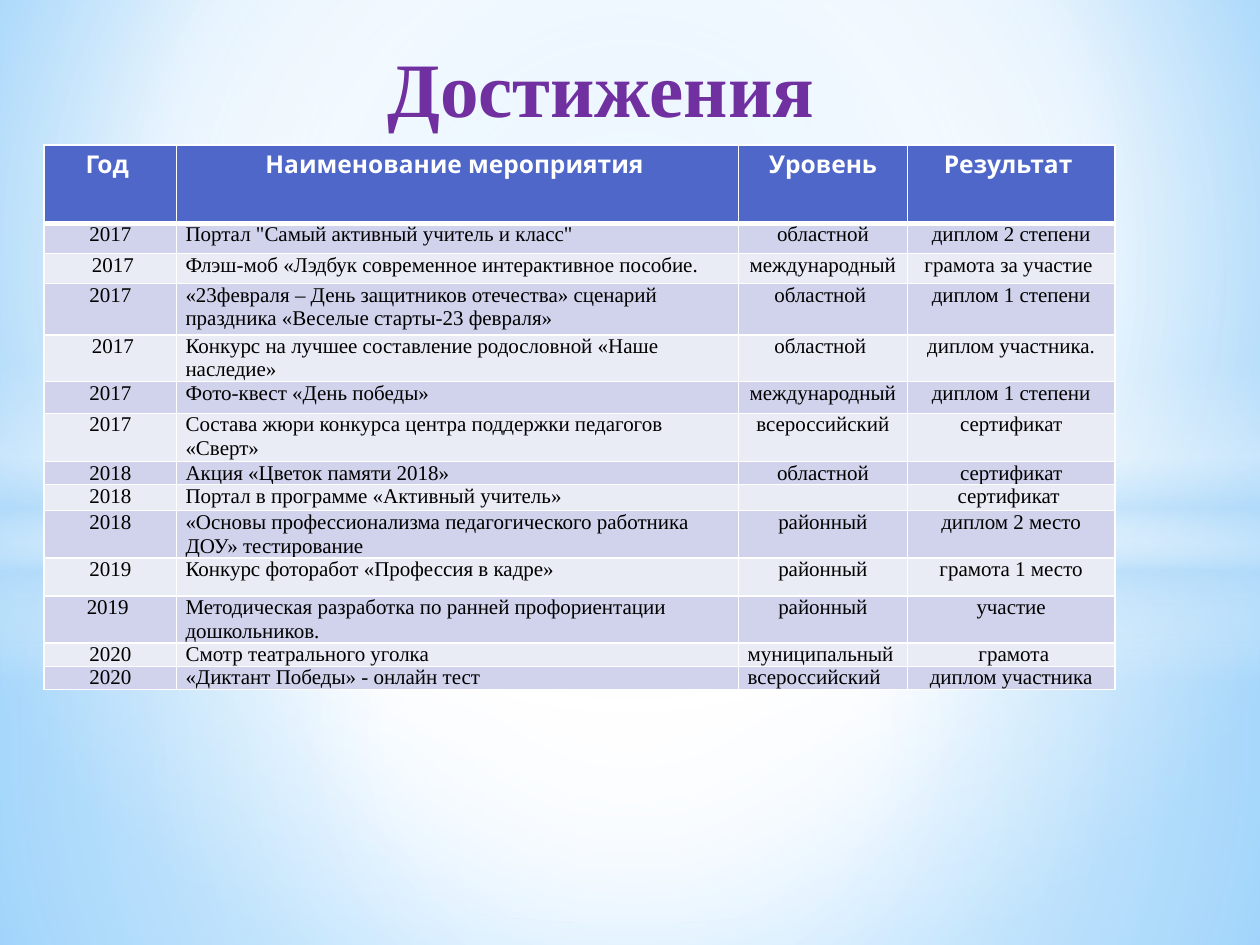
from lxml import etree
from pptx import Presentation
from pptx.dml.color import RGBColor
from pptx.enum.shapes import MSO_SHAPE
from pptx.enum.text import MSO_ANCHOR, PP_ALIGN
from pptx.oxml.ns import qn
from pptx.util import Cm, Pt

RECTANGLE, OVAL = MSO_SHAPE.RECTANGLE, MSO_SHAPE.OVAL
LEFT, CENTER = PP_ALIGN.LEFT, PP_ALIGN.CENTER
MIDDLE = MSO_ANCHOR.MIDDLE

WHITE = RGBColor(0xFF, 0xFF, 0xFF)
BLACK = RGBColor(0, 0, 0)
PURPLE = RGBColor(0x70, 0x30, 0xA0)
HEADER_BLUE = RGBColor(0x4E, 0x67, 0xC8)
BAND_DARK = RGBColor(0xD0, 0xD3, 0xEB)
BAND_LIGHT = RGBColor(0xE9, 0xEB, 0xF5)
HAZE = RGBColor(0xB4, 0xDC, 0xFA)
SKY = RGBColor(0x9E, 0xD5, 0xFF)
DEEP_SKY = RGBColor(0x5B, 0xB9, 0xFF)

BODY_FONT, HEADER_FONT = "Times New Roman", "Karla"
WIDTH, HEIGHT = 25.4, 19.05
MIDPOINT = (50, 50, 50, 50)

# Shape, box in cm, stops (position, colour, opacity), centre rectangle or None for vertical
GLOWS = [
    (RECTANGLE, (0, 10.74, WIDTH, 8.31),
     [(0, WHITE, 91), (37, WHITE, 76), (100, HAZE, 79)], MIDPOINT),
    (RECTANGLE, (0, 0, WIDTH, 10.74),
     [(0, WHITE, 89), (48, WHITE, 62), (100, HAZE, 79)], MIDPOINT),
    (RECTANGLE, (0, 7.37, WIDTH, 6.35),
     [(0, WHITE, 0), (29, WHITE, 30), (45, HAZE, 40), (55, WHITE, 26),
      (65, HAZE, 60), (100, WHITE, 0)], None),
    (OVAL, (0, 4.45, WIDTH, 14.17), [(0, WHITE, 100), (54, WHITE, 0)], MIDPOINT),
]

COLUMN_WIDTHS = [2.67, 11.33, 3.4, 4.19]
HEADER_HEIGHT = 1.58
HEADERS = ["Год ", "Наименование мероприятия ", "Уровень", "Результат "]
# Row height in cm, then the four cells
ACHIEVEMENTS = [
    (0.61, "2017", "Портал \"Самый активный учитель и класс\"", "областной", "диплом 2 степени"),
    (0.61, " 2017", "Флэш-моб «Лэдбук современное интерактивное пособие.",
     "международный", "грамота за участие "),
    (1.03, "2017", "«23февраля – День защитников отечества» сценарий праздника "
     "«Веселые старты-23 февраля»", "областной ", "диплом 1 степени"),
    (0.94, " 2017", "Конкурс на лучшее составление родословной «Наше наследие»",
     "областной ", "диплом участника."),
    (0.64, "2017", "Фото-квест «День победы»", "международный", "диплом 1 степени"),
    (0.97, "2017", "Состава жюри конкурса центра поддержки педагогов «Сверт»",
     "всероссийский", "сертификат"),
    (0.47, "2018", "Акция «Цветок памяти 2018»", "областной", "сертификат"),
    (0.47, "2018", "Портал в программе «Активный учитель»", "", "сертификат "),
    (0.96, "2018", "«Основы профессионализма педагогического работника ДОУ» тестирование",
     "районный", "диплом 2 место"),
    (0.77, "2019", "Конкурс фоторабот «Профессия в кадре»", "районный", "грамота 1 место"),
    (0.94, "2019 ", "Методическая разработка по ранней профориентации дошкольников.",
     "районный", "участие"),
    (0.47, "2020", "Смотр театрального уголка", "муниципальный", " грамота"),
    (0.47, "2020", "«Диктант Победы» - онлайн тест", "всероссийский", "диплом участника"),
]
LEFT_LEVEL_ROWS = (12, 13)
EXACT_SPACING_ROWS = (8, 9)


def write_text(text_frame, text, *, size, color, font=BODY_FONT, bold=False,
               align=CENTER, line_spacing=None, space_after=None):
    paragraph = text_frame.paragraphs[0]
    paragraph.alignment = align
    paragraph.line_spacing = line_spacing
    paragraph.space_after = space_after
    if not text:
        # An empty cell still takes its line height from the end-of-paragraph size
        end = etree.SubElement(paragraph._p, qn("a:endParaRPr"))
        end.set("sz", str(size * 100))
        return
    run = paragraph.add_run()
    run.text = text
    run.font.size = Pt(size)
    run.font.name = font
    run.font.bold = bold
    run.font.color.rgb = color


def set_gradient(fill, element, stops, center):
    """Swap the first solid fill under element for a gradient."""
    fill.solid()
    solid = element.find(".//" + qn("a:solidFill"))
    gradient = etree.Element(qn("a:gradFill"), rotWithShape="1")
    stop_list = etree.SubElement(gradient, qn("a:gsLst"))
    for position, color, opacity in stops:
        stop = etree.SubElement(stop_list, qn("a:gs"), pos=str(position * 1000))
        tone = etree.SubElement(stop, qn("a:srgbClr"), val=str(color))
        etree.SubElement(tone, qn("a:alpha"), val=str(opacity * 1000))
    if center is None:
        etree.SubElement(gradient, qn("a:lin"), ang="5400000", scaled="0")
    else:
        circle = etree.SubElement(gradient, qn("a:path"))
        circle.set("path", "circle")
        focus = etree.SubElement(circle, qn("a:fillToRect"))
        for side, percent in zip("ltrb", center):
            focus.set(side, str(percent * 1000))
    solid.getparent().replace(solid, gradient)


def add_backdrop(slide):
    set_gradient(slide.background.fill, slide._element.cSld,
                 [(0, SKY, 100), (60, WHITE, 100), (100, DEEP_SKY, 100)], (20, 10, 20, 60))
    for kind, box, stops, center in GLOWS:
        glow = slide.shapes.add_shape(kind, *map(Cm, box))
        glow.shadow.inherit = False
        glow.line.fill.background()
        set_gradient(glow.fill, glow._element.spPr, stops, center)


def place_title(slide, left, top, width, height):
    title = slide.shapes.title
    title.left, title.top, title.width, title.height = map(Cm, (left, top, width, height))
    title.text_frame.vertical_anchor = MIDDLE
    write_text(title.text_frame, "Достижения", size=44, color=PURPLE, bold=True,
               space_after=Pt(3))
    slide.shapes._spTree.append(title._element)  # in front of the backdrop


def set_borders(cell, top, bottom):
    properties = cell._tc.get_or_add_tcPr()
    for side, points in (("L", 1), ("R", 1), ("T", top), ("B", bottom)):
        line = etree.SubElement(properties, qn(f"a:ln{side}"), w=str(Pt(points)))
        fill = etree.SubElement(line, qn("a:solidFill"))
        etree.SubElement(fill, qn("a:srgbClr"), val=str(WHITE))


def fill_header_cell(cell, text):
    set_borders(cell, top=1, bottom=3)
    cell.fill.solid()
    cell.fill.fore_color.rgb = HEADER_BLUE
    write_text(cell.text_frame, text, size=14, color=WHITE, font=HEADER_FONT, bold=True)


def fill_body_cell(cell, text, row, column):
    set_borders(cell, top=3 if row == 1 else 1, bottom=1)
    cell.margin_left = cell.margin_right = Cm(0.18)
    cell.margin_top = cell.margin_bottom = 0
    cell.fill.solid()
    cell.fill.fore_color.rgb = BAND_DARK if row % 2 else BAND_LIGHT
    is_left = column == 1 or (column == 2 and row in LEFT_LEVEL_ROWS)
    is_exact = column == 1 and row in EXACT_SPACING_ROWS
    write_text(cell.text_frame, text, size=12, color=BLACK,
               align=LEFT if is_left else CENTER,
               line_spacing=Pt(13.5) if is_exact else None)


def add_achievements_table(slide, left, top):
    heights = [HEADER_HEIGHT] + [height for height, *_ in ACHIEVEMENTS]
    frame = slide.shapes.add_table(len(heights), len(COLUMN_WIDTHS), Cm(left), Cm(top),
                                   Cm(sum(COLUMN_WIDTHS)), Cm(sum(heights)))
    table = frame.table
    for column, width in zip(table.columns, COLUMN_WIDTHS):
        column.width = Cm(width)
    for row, height in zip(table.rows, heights):
        row.height = Cm(height)
    for column, text in enumerate(HEADERS):
        fill_header_cell(table.cell(0, column), text)
    for row, (_, *texts) in enumerate(ACHIEVEMENTS, start=1):
        for column, text in enumerate(texts):
            fill_body_cell(table.cell(row, column), text, row, column)


def main():
    presentation = Presentation()
    presentation.slide_width, presentation.slide_height = Cm(WIDTH), Cm(HEIGHT)
    slide = presentation.slides.add_slide(presentation.slide_layouts[5])
    add_backdrop(slide)
    place_title(slide, 4.29, 0.53, 15.65, 2.44)
    add_achievements_table(slide, 0.89, 2.92)
    presentation.save("out.pptx")


if __name__ == "__main__":
    main()
